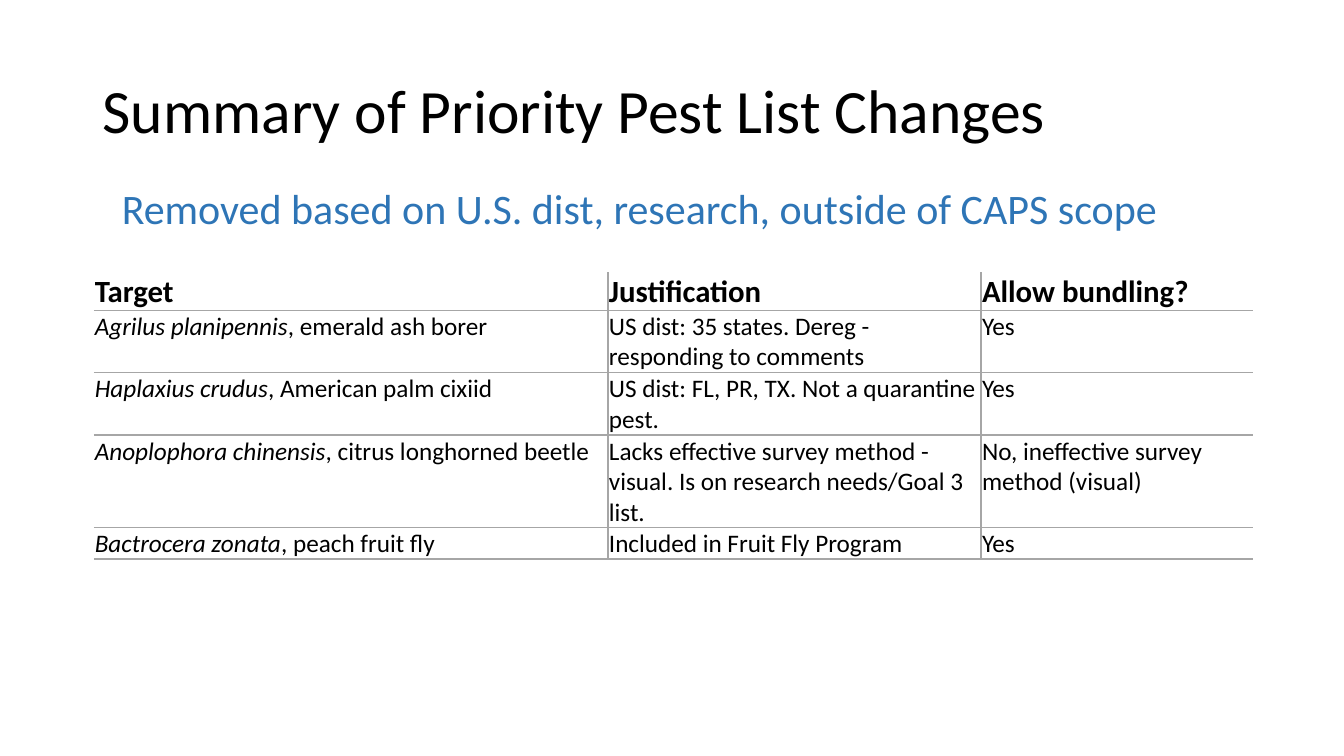
from lxml import etree
from pptx import Presentation
from pptx import util as u
from pptx.dml.color import RGBColor
from pptx.enum import text
from pptx.oxml import ns

BLACK = RGBColor(0x00, 0x00, 0x00)
BLUE = RGBColor(0x2E, 0x75, 0xB6)
GREY = RGBColor(0xA6, 0xA6, 0xA6)
FONT = "Calibri"

COLUMNS = (5.1, 3.7, 2.7)
ROW_HEIGHTS = (0.37, 0.62, 0.62, 0.92, 0.31)
HEADINGS = ("Target", "Justification", "Allow bundling?")
PESTS = (
    ("Agrilus planipennis", ", emerald ash borer",
     "US dist: 35 states. Dereg - responding to comments", "Yes"),
    ("Haplaxius crudus", ", American palm cixiid",
     "US dist: FL, PR, TX. Not a quarantine pest.", "Yes"),
    ("Anoplophora chinensis", ", citrus longhorned beetle",
     "Lacks effective survey method - visual. Is on research needs/Goal 3 list.",
     "No, ineffective survey method (visual)"),
    ("Bactrocera zonata", ", peach fruit fly",
     "Included in Fruit Fly Program", "Yes"),
)


def add_run(p, words, size, color=BLACK, bold=False, italic=False):
    r = p.add_run()
    r.text = words
    f = r.font
    f.name, f.size, f.bold, f.italic = FONT, u.Pt(size), bold, italic
    f.color.rgb = color


def add_heading(s, box, words, size, color, anchor, spacing=1.0):
    sp = s.shapes.add_textbox(*map(u.Inches, box))
    tf = sp.text_frame
    tf.word_wrap = True
    tf.vertical_anchor = anchor
    p = tf.paragraphs[0]
    p.line_spacing = spacing
    add_run(p, words, size, color)


def set_borders(cell, sides):
    tcPr = cell._tc.get_or_add_tcPr()
    for side in "LRTB":
        ln = etree.SubElement(tcPr, ns.qn(f"a:ln{side}"), w=str(u.Pt(1)))
        if side in sides:
            fill = etree.SubElement(ln, ns.qn("a:solidFill"))
            etree.SubElement(fill, ns.qn("a:srgbClr"), val=str(GREY))
        else:
            etree.SubElement(ln, ns.qn("a:noFill"))


def format_cell(cell, row, col):
    sides = "B"
    if row > 0:
        sides += "T"
    if col > 0:
        sides += "L"
    if col < len(COLUMNS) - 1:
        sides += "R"
    set_borders(cell, sides)
    cell.fill.background()
    cell.margin_left = cell.margin_top = cell.margin_right = u.Inches(0.01)
    cell.margin_bottom = 0
    cell.vertical_anchor = text.MSO_ANCHOR.TOP if row else text.MSO_ANCHOR.BOTTOM


def add_pest_table(s, box):
    frame = s.shapes.add_table(len(ROW_HEIGHTS), len(COLUMNS), *map(u.Inches, box))
    table = frame.table
    table.first_row = table.horz_banding = False
    for column, width in zip(table.columns, COLUMNS):
        column.width = u.Inches(width)
    for row, height in zip(table.rows, ROW_HEIGHTS):
        row.height = u.Inches(height)
    for i in range(len(ROW_HEIGHTS)):
        for j in range(len(COLUMNS)):
            format_cell(table.cell(i, j), i, j)
    for j, heading in enumerate(HEADINGS):
        add_run(table.cell(0, j).text_frame.paragraphs[0], heading, 22, bold=True)
    for i, (species, common, reason, bundling) in enumerate(PESTS, 1):
        target, why, allowed = (table.cell(i, j).text_frame.paragraphs[0] for j in range(3))
        add_run(target, species, 18, italic=True)
        add_run(target, common, 18)
        add_run(why, reason, 18)
        add_run(allowed, bundling, 18)


def main():
    prs = Presentation()
    prs.slide_width, prs.slide_height = u.Inches(13.33), u.Inches(7.5)
    s = prs.slides.add_slide(prs.slide_layouts[6])
    add_heading(s, (0.92, 0.4, 11.5, 1.45), "Summary of Priority Pest List Changes",
                44, BLACK, text.MSO_ANCHOR.MIDDLE, 0.9)
    add_pest_table(s, (0.93, 2.7, sum(COLUMNS), sum(ROW_HEIGHTS)))
    add_heading(s, (1.11, 1.76, 10.87, 0.61),
                "Removed based on U.S. dist, research, outside of CAPS scope",
                30, BLUE, text.MSO_ANCHOR.TOP)
    prs.save("out.pptx")


if __name__ == "__main__":
    main()
